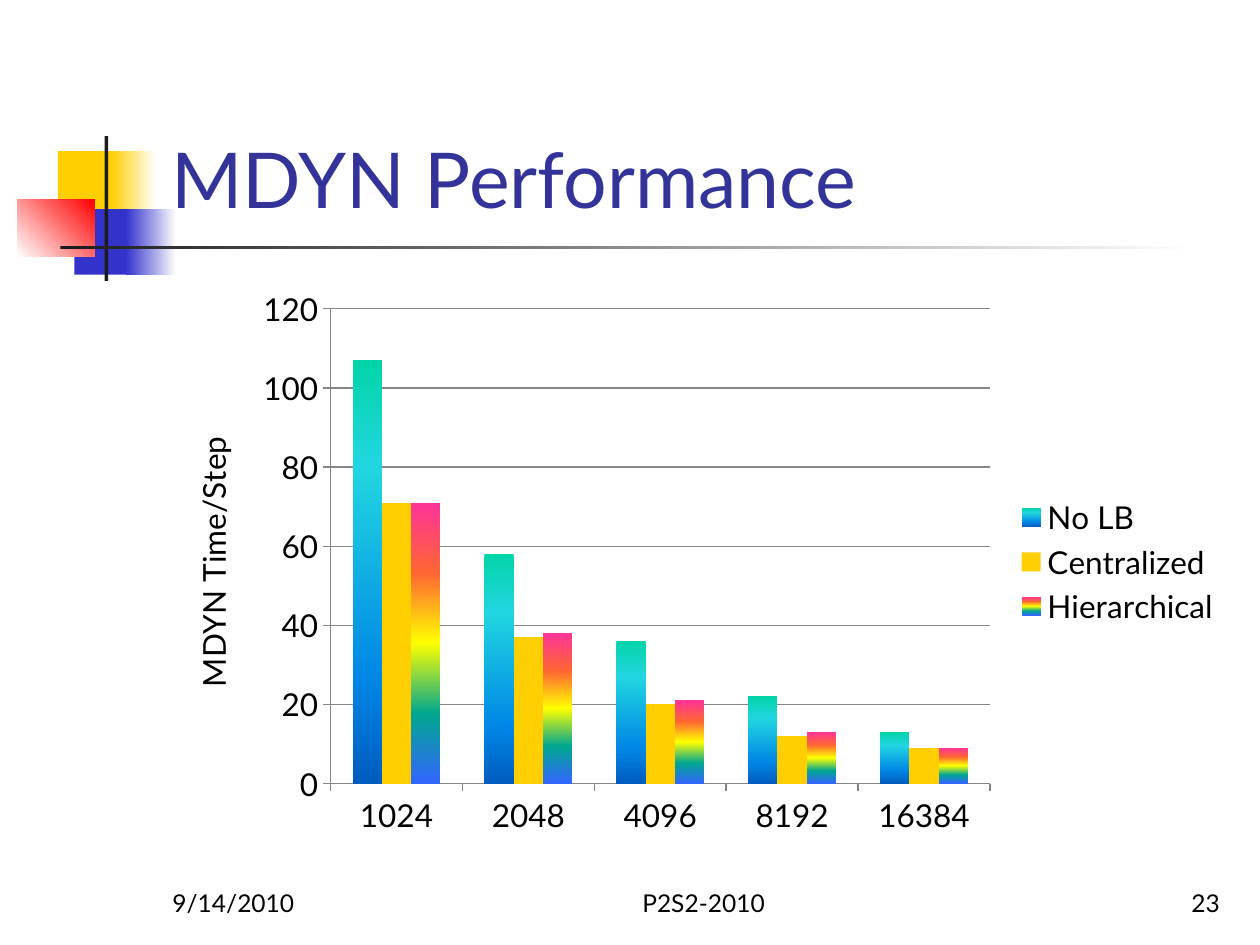
from pptx import Presentation
from pptx.chart.data import CategoryChartData as ChartData
from pptx.dml.color import RGBColor
from pptx.enum.chart import XL_CHART_TYPE as Kind, XL_LEGEND_POSITION as Side, XL_TICK_MARK as Tick
from pptx.enum.shapes import MSO_SHAPE as Shape
from pptx.enum.text import MSO_ANCHOR as Anchor, PP_ALIGN as Align
from pptx.oxml import parse_xml
from pptx.oxml.ns import nsdecls, qn
from pptx.util import Inches, Pt

FACE = "Lato"
BLACK = RGBColor(0x00, 0x00, 0x00)
WHITE = RGBColor(0xFF, 0xFF, 0xFF)
INK = RGBColor(0x1C, 0x1C, 0x1C)
GOLD = RGBColor(0xFF, 0xCF, 0x01)
BLUE = RGBColor(0x33, 0x33, 0xCC)
RED = RGBColor(0xFF, 0x00, 0x00)
NAVY = RGBColor(0x33, 0x33, 0x99)
GRAY = RGBColor(0x86, 0x86, 0x86)
OCEAN = [
    (0, RGBColor(0x03, 0xD4, 0xA8)),
    (25, RGBColor(0x21, 0xD6, 0xE0)),
    (75, RGBColor(0x00, 0x87, 0xE6)),
    (100, RGBColor(0x00, 0x5C, 0xBF)),
]
RAINBOW = [
    (0, RGBColor(0xFF, 0x33, 0x99)),
    (25, RGBColor(0xFF, 0x66, 0x33)),
    (50, RGBColor(0xFF, 0xFF, 0x00)),
    (75, RGBColor(0x01, 0xA7, 0x8F)),
    (100, RGBColor(0x33, 0x66, 0xFF)),
]


def paint(fill, props, color, angle=0):
    """Fill with one colour, or with a list of gradient stops at a clockwise angle."""
    fill.solid()
    if isinstance(color, RGBColor):
        fill.fore_color.rgb = color
        return
    stops = "".join(
        f'<a:gs pos="{at * 1000}"><a:srgbClr val="{tone}"/></a:gs>' for at, tone in color
    )
    grad = parse_xml(
        f'<a:gradFill {nsdecls("a")} rotWithShape="1"><a:gsLst>{stops}</a:gsLst>'
        f'<a:lin ang="{angle * 60000}" scaled="0"/></a:gradFill>'
    )
    props.replace(props.find(qn("a:solidFill")), grad)


def add_block(slide, box, color, angle=0):
    """Add one borderless rectangle."""
    block = slide.shapes.add_shape(Shape.RECTANGLE, *map(Inches, box))
    block.shadow.inherit = False
    block.line.fill.background()
    paint(block.fill, block._element.spPr, color, angle)


def add_motif(slide, left, top):
    """Add the overlapping squares and the two crossing bars."""
    blocks = [
        (0.32, 0.12, 0.48, 0.52, GOLD, 0),
        (0.74, 0.12, 0.36, 0.52, [(0, GOLD), (100, WHITE)], 0),
        (0.45, 0.58, 0.46, 0.52, BLUE, 0),
        (0.86, 0.58, 0.4, 0.52, [(0, BLUE), (100, WHITE)], 0),
        (0, 0.5, 0.61, 0.46, [(0, WHITE), (100, RED)], 315),
        (0.69, 0, 0.03, 1.15, INK, 0),
        (0.34, 0.87, 9, 0.03, [(0, INK), (100, WHITE)], 0),
    ]
    for x, y, wide, high, color, angle in blocks:
        add_block(slide, (left + x, top + y, wide, high), color, angle)


def add_label(slide, box, text, size, color=BLACK, align=Align.LEFT):
    """Add a line of text standing on the bottom of its box."""
    frame = slide.shapes.add_textbox(*map(Inches, box)).text_frame
    frame.word_wrap = True
    frame.vertical_anchor = Anchor.BOTTOM
    para = frame.paragraphs[0]
    para.text = text
    para.alignment = align
    para.font.name = FACE
    para.font.size = Pt(size)
    para.font.color.rgb = color


def add_footer(slide, left, top, width, height):
    """Add the date, the event and the page number along one row."""
    side = 2.08
    add_label(slide, (left, top, side, height), "9/14/2010", 14)
    add_label(slide, (left + 2.73, top, 3.17, height), "P2S2-2010", 14, align=Align.CENTER)
    add_label(slide, (left + width - side, top, side, height), "23", 14, align=Align.RIGHT)


def add_bars(slide, box):
    """Add the clustered column chart of step times."""
    rows = [
        ("No LB", (107, 58, 36, 22, 13), OCEAN),
        ("Centralized", (71, 37, 20, 12, 9), GOLD),
        ("Hierarchical", (71, 38, 21, 13, 9), RAINBOW),
    ]
    data = ChartData()
    data.categories = ["1024", "2048", "4096", "8192", "16384"]
    for name, times, _ in rows:
        data.add_series(name, times)
    chart = slide.shapes.add_chart(Kind.COLUMN_CLUSTERED, *map(Inches, box), data).chart
    chart.font.name = FACE
    chart.font.size = Pt(18)
    chart.font.color.rgb = BLACK
    chart.has_title = False
    chart.has_legend = True
    chart.legend.position = Side.RIGHT
    chart.legend.include_in_layout = False

    plot = chart.plots[0]
    plot.vary_by_categories = False
    plot.gap_width = 150
    plot.overlap = 0
    for series, (_, _, color) in zip(plot.series, rows):
        paint(series.format.fill, series._element.spPr, color, 90)

    steps = chart.value_axis
    steps.minimum_scale, steps.maximum_scale, steps.major_unit = 0, 120, 20
    steps.has_major_gridlines = True
    for axis in (chart.category_axis, steps):
        axis.major_tick_mark = Tick.OUTSIDE
        axis.minor_tick_mark = Tick.NONE
    for part in (chart.category_axis, steps, steps.major_gridlines):
        part.format.line.color.rgb = GRAY
        part.format.line.width = Pt(0.75)
    para = steps.axis_title.text_frame.paragraphs[0]
    para.text = "MDYN Time/Step"
    para.font.name = FACE
    para.font.size = Pt(18)
    para.font.bold = False
    para.font.color.rgb = BLACK


def main():
    """Build the slide and save it."""
    deck = Presentation()
    deck.slide_width, deck.slide_height = Inches(10), Inches(7.5)
    slide = deck.slides.add_slide(deck.slide_layouts[6])
    add_motif(slide, 0.14, 1.08)
    add_label(slide, (1.26, 0.23, 8.52, 1.6), "MDYN Performance", 44, NAVY)
    add_bars(slide, (1.29, 2.21, 8.5, 4.5))
    add_footer(slide, 1.27, 6.83, 8.51, 0.5)
    deck.save("out.pptx")


if __name__ == "__main__":
    main()
